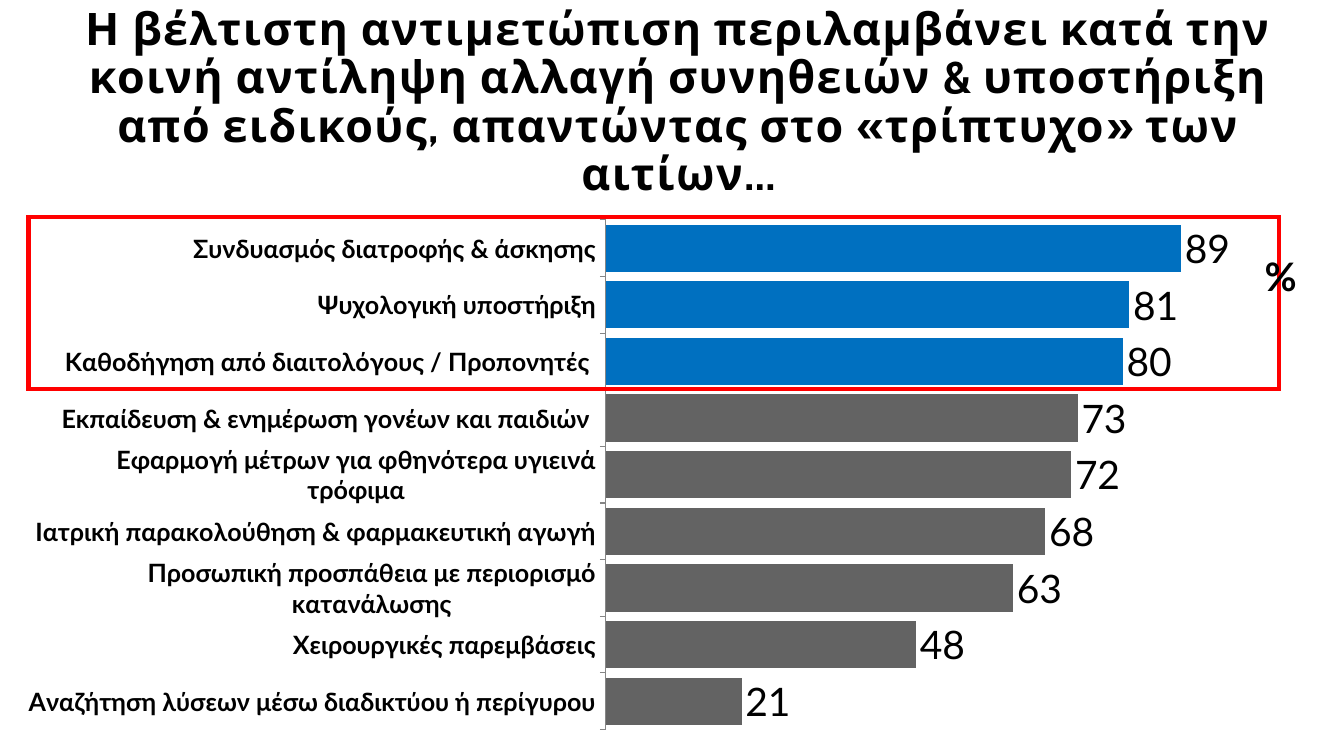
from dataclasses import dataclass

from lxml.etree import SubElement
from pptx import Presentation
from pptx.chart.data import CategoryChartData
from pptx.dml.color import RGBColor as RGB
from pptx.enum.chart import XL_CHART_TYPE as Chart, XL_LABEL_POSITION as LabelPos
from pptx.enum.chart import XL_TICK_LABEL_POSITION as TickPos, XL_TICK_MARK as Tick
from pptx.enum.shapes import MSO_SHAPE as Shape
from pptx.enum.text import MSO_ANCHOR as Anchor, MSO_AUTO_SIZE as AutoSize, PP_ALIGN as Align
from pptx.oxml.ns import qn
from pptx.util import Cm, Pt


@dataclass(frozen=True)
class Theme:
    text: RGB = RGB(0, 0, 0)
    top: RGB = RGB(0x00, 0x70, 0xC0)
    bar: RGB = RGB(0x63, 0x63, 0x63)
    axis: RGB = RGB(0x86, 0x86, 0x86)
    frame: RGB = RGB(0xFF, 0, 0)
    head_font: str = "Cabin"
    body_font: str = "Lato"
    title: Pt = Pt(32)
    value: Pt = Pt(28)
    label: Pt = Pt(18)
    rule: Pt = Pt(3)


T = Theme()
TITLE = ("Η βέλτιστη αντιμετώπιση περιλαμβάνει κατά την κοινή αντίληψη αλλαγή συνηθειών "
         "& υποστήριξη από ειδικούς, απαντώντας στο «τρίπτυχο» των αιτίων…")
ANSWERS = {
    "Συνδυασμός διατροφής & άσκησης": 0.89,
    "Ψυχολογική υποστήριξη": 0.81,
    "Καθοδήγηση από διαιτολόγους / Προπονητές ": 0.80,
    "Εκπαίδευση & ενημέρωση γονέων και παιδιών ": 0.73,
    "Εφαρμογή μέτρων για φθηνότερα υγιεινά τρόφιμα": 0.72,
    "Ιατρική παρακολούθηση & φαρμακευτική αγωγή": 0.68,
    "Προσωπική προσπάθεια με περιορισμό κατανάλωσης": 0.63,
    "Χειρουργικές παρεμβάσεις": 0.48,
    "Αναζήτηση λύσεων μέσω διαδικτύου ή περίγυρου ": 0.21,
}
TOP_COUNT = 3
PLOT = {"x": 0.467, "y": 0.019, "w": 0.528, "h": 0.965}


def set_all(target, **values):
    for name, value in values.items():
        setattr(target, name, value)


def style(font, size, bold=False, name=T.body_font):
    set_all(font, size=size, bold=bold, name=name)
    font.color.rgb = T.text


def paint(fmt, color):
    fmt.fill.solid()
    fmt.fill.fore_color.rgb = color


def add_title(s, left, top, width, height):
    sp = s.shapes.title
    set_all(sp, left=left, top=top, width=width, height=height)
    tf = sp.text_frame
    set_all(tf, word_wrap=True, auto_size=AutoSize.NONE, vertical_anchor=Anchor.BOTTOM)
    p = tf.paragraphs[0]
    set_all(p, alignment=Align.CENTER, line_spacing=0.9)
    r = p.add_run()
    r.text = TITLE
    style(r.font, T.title, True, T.head_font)
    r.font._element.set("spc", "100")


def fix_plot(chart):
    """Pin the inner plot area to fractions of the chart."""
    area = chart._chartSpace.chart.plotArea
    for old in area.findall(qn("c:layout")):
        area.remove(old)
    layout = SubElement(area, qn("c:layout"))
    area.insert(0, layout)
    manual = SubElement(layout, qn("c:manualLayout"))
    parts = {"layoutTarget": "inner", "xMode": "edge", "yMode": "edge", **PLOT}
    for tag, value in parts.items():
        SubElement(manual, qn(f"c:{tag}")).set("val", str(value))


def label_bars(series):
    """Show each share as a whole number after its bar."""
    labels = series.data_labels
    set_all(labels, show_value=True, number_format="0%", number_format_is_linked=False,
            position=LabelPos.OUTSIDE_END)
    style(labels.font, T.value, True)
    for i, share in enumerate(ANSWERS.values()):
        label = series.points[i].data_label
        r = label.text_frame.paragraphs[0].add_run()
        r.text = f"{share * 100:.0f}"
        style(r.font, T.value)
        label.position = LabelPos.OUTSIDE_END


def add_bars(s, left, top, width, height):
    data = CategoryChartData(number_format="0%")
    data.categories = list(ANSWERS)
    data.add_series("Series 1", list(ANSWERS.values()))
    chart = s.shapes.add_chart(Chart.BAR_CLUSTERED, left, top, width, height, data).chart
    set_all(chart, has_legend=False, has_title=False)
    style(chart.font, T.label)
    fix_plot(chart)

    cats = chart.category_axis
    set_all(cats, reverse_order=True, major_tick_mark=Tick.OUTSIDE,
            tick_label_position=TickPos.LOW, has_major_gridlines=False)
    style(cats.tick_labels.font, T.label, True)
    cats.format.line.color.rgb = T.axis
    shares = chart.value_axis
    set_all(shares, visible=False, minimum_scale=0, maximum_scale=1,
            has_major_gridlines=False)
    set_all(shares.tick_labels, number_format="0.0%", number_format_is_linked=False)

    plot = chart.plots[0]
    set_all(plot, gap_width=20, vary_by_categories=False)
    series = plot.series[0]
    series.invert_if_negative = False
    paint(series.format, T.bar)
    for i in range(TOP_COUNT):
        paint(series.points[i].format, T.top)
    label_bars(series)


def add_frame(s, left, top, width, height):
    sp = s.shapes.add_shape(Shape.RECTANGLE, left, top, width, height)
    sp.shadow.inherit = False
    sp.fill.background()
    sp.line.color.rgb = T.frame
    sp.line.width = T.rule
    SubElement(sp.line._get_or_add_ln(), qn("a:miter")).set("lim", "800000")


def add_unit(s, left, top, width, height):
    tf = s.shapes.add_textbox(left, top, width, height).text_frame
    tf.word_wrap = True
    r = tf.paragraphs[0].add_run()
    r.text = "%"
    style(r.font, T.value, True)


def main():
    prs = Presentation()
    set_all(prs, slide_width=Cm(33.87), slide_height=Cm(19.05))
    s = prs.slides.add_slide(prs.slide_layouts[5])
    left = Cm(0.72)
    add_title(s, left, Cm(2.44), Cm(32.77), Cm(2.74))
    add_bars(s, left, Cm(5.29), Cm(30.99), Cm(13.31))
    add_frame(s, left, Cm(5.46), Cm(31.52), Cm(4.34))
    add_unit(s, Cm(31.62), Cm(6.24), Cm(1.88), Cm(1.45))
    prs.save("out.pptx")


if __name__ == "__main__":
    main()
